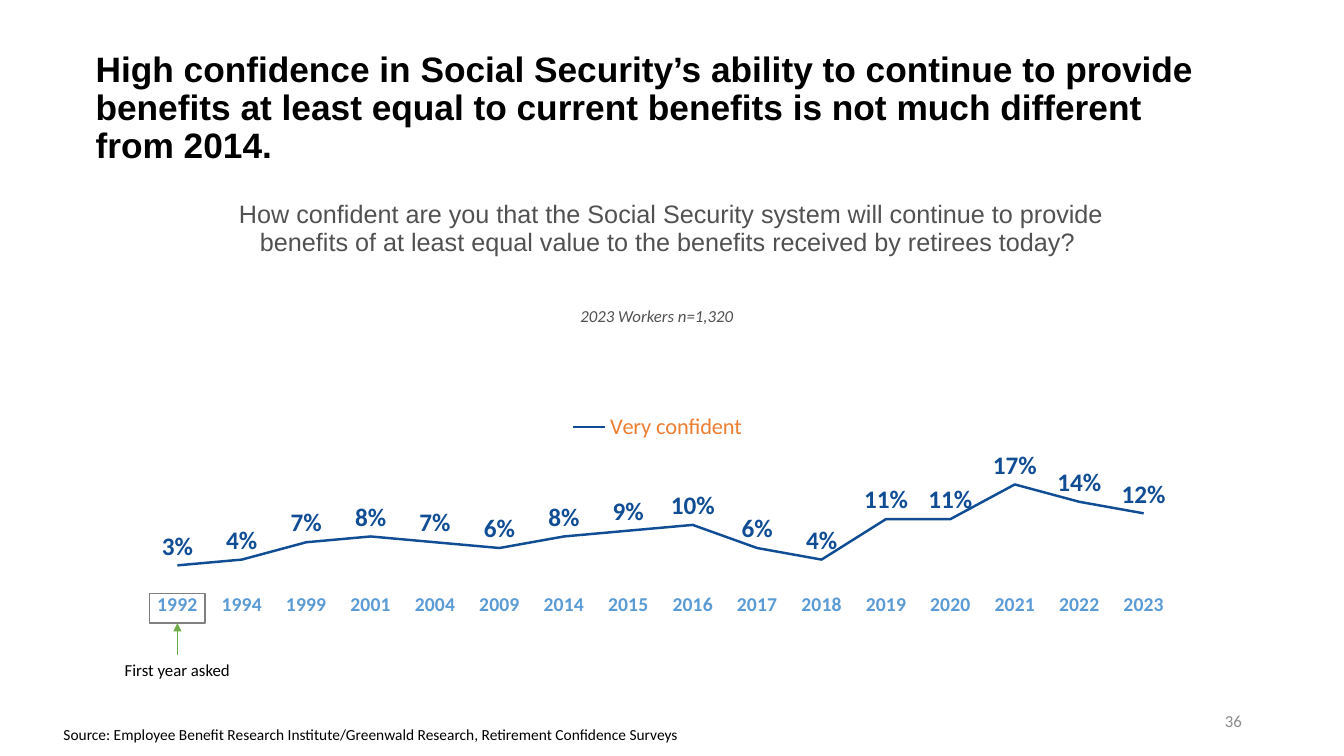
from dataclasses import dataclass

from lxml import etree
from pptx import Presentation
from pptx.chart.data import CategoryChartData
from pptx.dml.color import RGBColor
from pptx.enum.chart import (XL_CHART_TYPE, XL_LABEL_POSITION, XL_LEGEND_POSITION,
                             XL_MARKER_STYLE, XL_TICK_MARK)
from pptx.enum.shapes import MSO_CONNECTOR, MSO_SHAPE
from pptx.enum.text import MSO_ANCHOR, PP_ALIGN
from pptx.oxml import parse_xml
from pptx.oxml.ns import nsdecls, qn
from pptx.util import Cm, Pt

LEFT, CENTER, RIGHT = PP_ALIGN.LEFT, PP_ALIGN.CENTER, PP_ALIGN.RIGHT
TOP, MIDDLE = MSO_ANCHOR.TOP, MSO_ANCHOR.MIDDLE
TOP_SIDE, BOTTOM_SIDE = 0, 2

HEADLINE = ("High confidence in Social Security’s ability to continue to provide "
            "benefits at least equal to current benefits is not much different from 2014.")
QUESTION = ("How confident are you that the Social Security system will continue to provide "
            "benefits of at least equal value to the benefits received by retirees today? ")
SAMPLE = "2023 Workers n=1,320"
FIRST_YEAR = "First year asked"
SOURCE = ("Source: Employee Benefit Research Institute/Greenwald Research, "
          "Retirement Confidence Surveys")
PAGE = "36"
ANSWER = "Very confident"
CONFIDENCE = {
    "1992": 0.03, "1994": 0.04, "1999": 0.07, "2001": 0.08,
    "2004": 0.07, "2009": 0.06, "2014": 0.08, "2015": 0.09,
    "2016": 0.10, "2017": 0.06, "2018": 0.04, "2019": 0.11,
    "2020": 0.11, "2021": 0.17, "2022": 0.14, "2023": 0.12,
}


@dataclass(frozen=True)
class Theme:
    heading: str = "Arial"
    body: str = "Calibri"
    black: str = "000000"
    white: str = "FFFFFF"
    muted: str = "515151"
    page: str = "8C8C8C"
    frame: str = "808080"
    series: str = "104D94"
    years: str = "5B9BD5"
    legend: str = "ED7D31"
    arrow: str = "70AD47"
    headline_size: float = 25.2
    chart_size: float = 18
    legend_size: float = 16
    year_size: float = 14
    note_size: float = 12
    source_size: float = 11


THEME = Theme()

# Left edge and width shared by headline and chart, in cm
MARGIN, CONTENT_WIDTH = 2.16, 28.83
CHART_TOP, CHART_HEIGHT = 4.14, 12.04
PLOT = {"x": 0.052, "y": 0.029, "w": 0.901, "h": 0.847}
TITLE_SPOT = {"x": 0.13, "y": 0.06}
LEGEND_SPOT = {"x": 0.41, "y": 0.51, "w": 0.18, "h": 0.08}
FRAME_TOP, FRAME_WIDTH, FRAME_HEIGHT = 14.96, 1.4, 0.74
NOTE_WIDTH, NOTE_HEIGHT = 5.23, 0.76


def rgb(color):
    return RGBColor.from_string(color)


def style(font, size, color, name=THEME.body, bold=False, italic=False):
    font.size, font.name = Pt(size), name
    font.bold, font.italic = bold, italic
    font.color.rgb = rgb(color)


def add_text(slide, box, text, size, color, align=LEFT, anchor=TOP, wrap=True,
             line_spacing=None, **font_options):
    label = slide.shapes.add_textbox(*map(Cm, box))
    frame = label.text_frame
    frame.word_wrap, frame.vertical_anchor = wrap, anchor
    paragraph = frame.paragraphs[0]
    paragraph.alignment, paragraph.line_spacing = align, line_spacing
    run = paragraph.add_run()
    run.text = text
    style(run.font, size, color, **font_options)
    return label


def place(part, spot, inner=False):
    """Give a chart part a manual layout in fractions of the chart."""
    target = '<c:layoutTarget val="inner"/>' if inner else ""
    modes = "".join(f'<c:{axis}Mode val="edge"/>' for axis in "xy")
    values = "".join(f'<c:{key} val="{value}"/>' for key, value in spot.items())
    layout = parse_xml(f'<c:layout {nsdecls("c")}><c:manualLayout>{target}{modes}{values}'
                       '</c:manualLayout></c:layout>')
    for old in part.findall(qn("c:layout")):
        part.remove(old)
    before = [child for child in part if child.tag in (qn("c:tx"), qn("c:legendPos"))]
    part.insert(len(before), layout)


def add_confidence_chart(slide):
    data = CategoryChartData(number_format="0%")
    data.categories = list(CONFIDENCE)
    data.add_series(ANSWER, list(CONFIDENCE.values()))
    box = map(Cm, (MARGIN, CHART_TOP, CONTENT_WIDTH, CHART_HEIGHT))
    chart = slide.shapes.add_chart(XL_CHART_TYPE.LINE, *box, data).chart
    style(chart.font, THEME.chart_size, THEME.black)

    chart.has_title = True
    question = chart.chart_title.text_frame.paragraphs[0].add_run()
    question.text = QUESTION
    style(question.font, THEME.chart_size, THEME.muted, THEME.heading)
    place(chart.chart_title._element, TITLE_SPOT)

    chart.has_legend = True
    legend = chart.legend
    legend.position, legend.include_in_layout = XL_LEGEND_POSITION.TOP, False
    style(legend.font, THEME.legend_size, THEME.legend)
    place(legend._element, LEGEND_SPOT)

    years = chart.category_axis
    years.major_tick_mark = XL_TICK_MARK.OUTSIDE
    years.format.line.fill.background()
    style(years.tick_labels.font, THEME.year_size, THEME.years, bold=True)
    shares = chart.value_axis
    shares.minimum_scale, shares.maximum_scale = 0, 0.7
    shares.has_major_gridlines = shares.visible = False

    plot = chart.plots[0]
    plot.vary_by_categories = False
    answer = plot.series[0]
    answer.smooth = False
    answer.marker.style = XL_MARKER_STYLE.NONE
    answer.format.line.color.rgb = rgb(THEME.series)
    answer.format.line.width = Pt(1.75)
    labels = answer.data_labels
    labels.show_value, labels.position = True, XL_LABEL_POSITION.ABOVE
    labels.number_format, labels.number_format_is_linked = "0%", False
    style(labels.font, THEME.chart_size, THEME.series, bold=True)

    area = chart._chartSpace.chart.plotArea
    place(area, PLOT, inner=True)
    area.append(parse_xml(f'<c:spPr {nsdecls("c", "a")}><a:solidFill>'
                          f'<a:srgbClr val="{THEME.white}"/></a:solidFill></c:spPr>'))


def add_first_year_marker(slide):
    year_step = CONTENT_WIDTH * PLOT["w"] / len(CONFIDENCE)
    center = MARGIN + CONTENT_WIDTH * PLOT["x"] + year_step / 2
    frame = slide.shapes.add_shape(
        MSO_SHAPE.RECTANGLE, Cm(center - FRAME_WIDTH / 2), Cm(FRAME_TOP),
        Cm(FRAME_WIDTH), Cm(FRAME_HEIGHT))
    frame.shadow.inherit = False
    frame.fill.background()
    frame.line.color.rgb, frame.line.width = rgb(THEME.frame), Pt(1)

    note = add_text(slide, (center - NOTE_WIDTH / 2, 16.51, NOTE_WIDTH, NOTE_HEIGHT),
                    FIRST_YEAR, THEME.note_size, THEME.black, CENTER)
    arrow = slide.shapes.add_connector(MSO_CONNECTOR.STRAIGHT, 0, 0, 0, 0)
    arrow.begin_connect(note, TOP_SIDE)
    arrow.end_connect(frame, BOTTOM_SIDE)
    arrow.line.color.rgb, arrow.line.width = rgb(THEME.arrow), Pt(0.5)
    etree.SubElement(arrow.line._get_or_add_ln(), qn("a:tailEnd"), type="triangle")
    etree.SubElement(arrow._element.spPr, qn("a:effectLst"))


def main():
    deck = Presentation()
    deck.slide_width, deck.slide_height = Cm(33.87), Cm(19.05)
    slide = deck.slides.add_slide(deck.slide_layouts[6])

    add_text(slide, (MARGIN, 1.93, CONTENT_WIDTH, 1.65), HEADLINE, THEME.headline_size,
             THEME.black, anchor=MIDDLE, line_spacing=0.9, name=THEME.heading, bold=True)
    add_confidence_chart(slide)
    add_first_year_marker(slide)
    add_text(slide, (13.94, 7.57, NOTE_WIDTH, NOTE_HEIGHT), SAMPLE, THEME.note_size,
             THEME.muted, CENTER, italic=True)
    add_text(slide, (23.93, 17.65, 7.62, 1.02), PAGE, THEME.note_size, THEME.page,
             RIGHT, MIDDLE)
    add_text(slide, (1.35, 18.14, 19.18, 0.74), SOURCE, THEME.source_size, THEME.black,
             wrap=False)
    deck.save("out.pptx")


if __name__ == "__main__":
    main()
